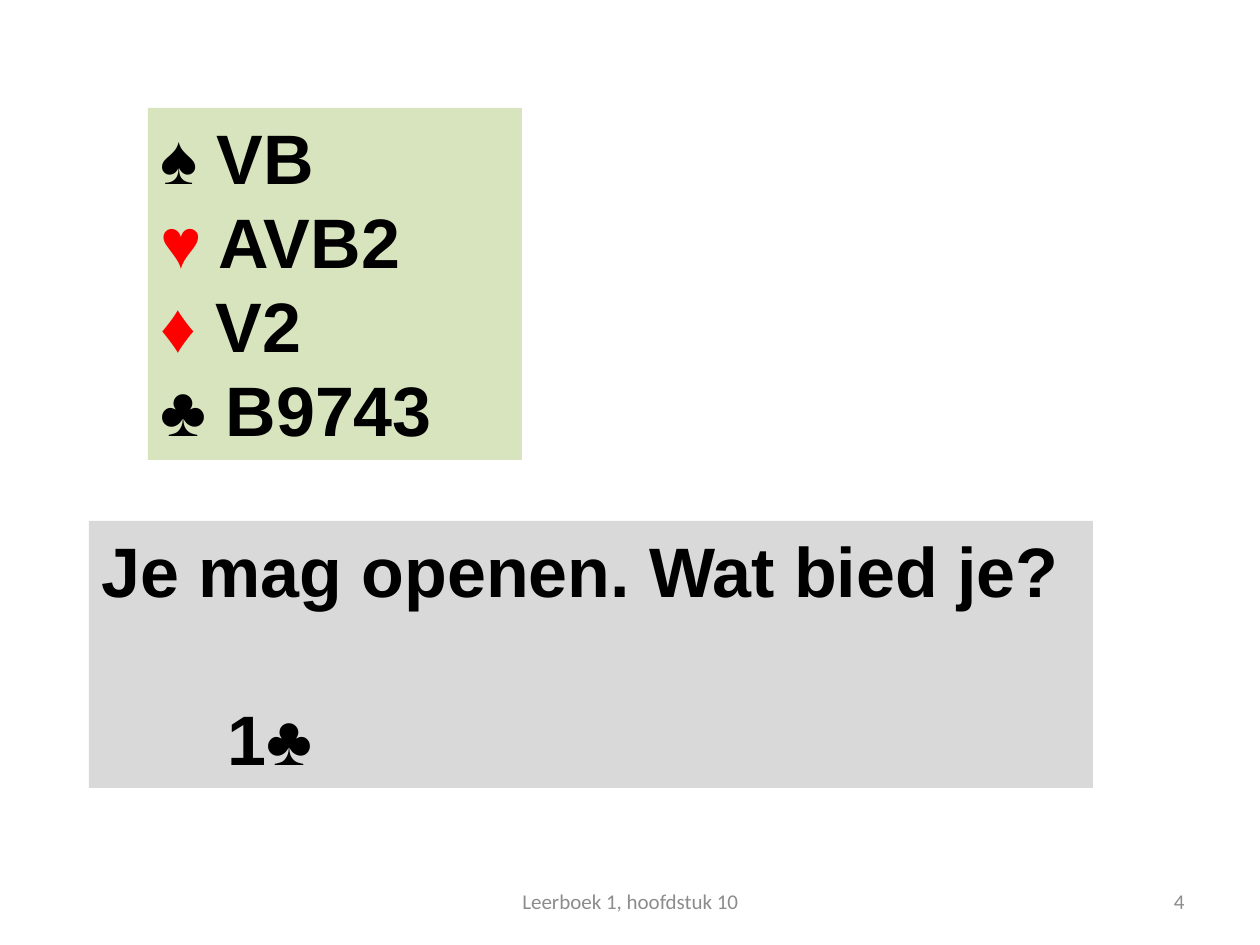
from pptx import Presentation
from pptx.dml.color import RGBColor
from pptx.enum.shapes import MSO_SHAPE
from pptx.enum.text import MSO_ANCHOR, PP_ALIGN
from pptx.util import Inches, Pt

COLORS = {
    "hand": "D7E4BD",
    "question": "D9D9D9",
    "black": "000000",
    "red": "FF0000",
    "footer": "8C8C8C",
}
PX_PER_INCH = 126
HAND = [("♠", "VB", "black"), ("♥", "AVB2", "red"),
        ("♦", "V2", "red"), ("♣", "B9743", "black")]


def px(*lengths):
    return [round(Inches(length / PX_PER_INCH)) for length in lengths]


class BridgeSlide:
    body_font, body_size = "Arial", 40
    footer_font, footer_size = "Calibri", 12

    def __init__(self, presentation):
        self.slide = presentation.slides.add_slide(presentation.slide_layouts[6])

    def format_run(self, run, font, size, color, bold=False):
        run.font.name = font
        run.font.size = Pt(size)
        run.font.bold = bold
        run.font.color.rgb = RGBColor.from_string(COLORS[color])

    def panel(self, box, fill, lines):
        """Add a filled rectangle; each line is a list of (text, color) pieces."""
        rectangle = self.slide.shapes.add_shape(MSO_SHAPE.RECTANGLE, *px(*box))
        rectangle.shadow.inherit = False
        rectangle.fill.solid()
        rectangle.fill.fore_color.rgb = RGBColor.from_string(COLORS[fill])
        rectangle.line.fill.background()
        frame = rectangle.text_frame
        frame.word_wrap = True
        frame.vertical_anchor = MSO_ANCHOR.TOP
        for index, pieces in enumerate(lines):
            paragraph = frame.add_paragraph() if index else frame.paragraphs[0]
            paragraph.alignment = PP_ALIGN.LEFT
            for text, color in pieces:
                run = paragraph.add_run()
                run.text = text
                self.format_run(run, self.body_font, self.body_size, color, bold=True)
        return frame

    def indent(self, paragraph, length):
        paragraph._p.get_or_add_pPr().set("marL", str(px(length)[0]))

    def footer(self, box, text, alignment):
        frame = self.slide.shapes.add_textbox(*px(*box)).text_frame
        frame.word_wrap = True
        frame.vertical_anchor = MSO_ANCHOR.MIDDLE
        frame.text = text
        paragraph = frame.paragraphs[0]
        paragraph.alignment = alignment
        self.format_run(paragraph.runs[0], self.footer_font, self.footer_size, "footer")


def main():
    presentation = Presentation()
    presentation.slide_width, presentation.slide_height = Inches(10), Inches(7.5)
    bidding = BridgeSlide(presentation)

    bidding.panel((148, 108, 374, 352), "hand",
                  [[(suit, color), (f" {cards}", "black")] for suit, cards, color in HAND])
    question = bidding.panel((89, 521, 1004, 267), "question",
                             [[("Je mag openen. Wat bied je?", "black")],
                              [("1♣", "black")]])
    answer = question.paragraphs[1]
    answer.space_before = Pt(48)
    bidding.indent(answer, 126)

    bidding.footer((903, 876, 294, 50), "4", PP_ALIGN.RIGHT)
    bidding.footer((431, 876, 399, 50), "Leerboek 1, hoofdstuk 10", PP_ALIGN.CENTER)
    presentation.save("out.pptx")


if __name__ == "__main__":
    main()
